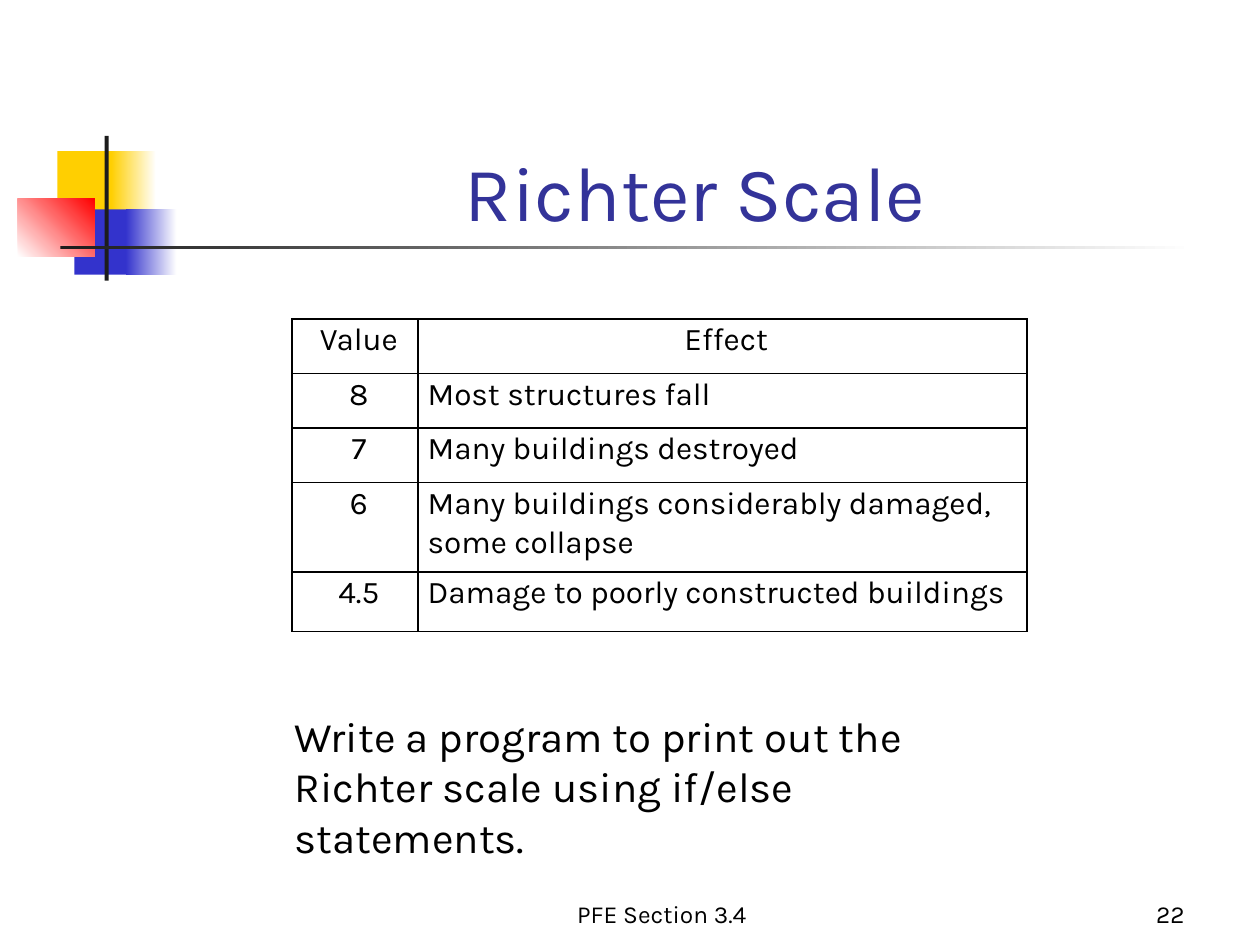
from lxml.etree import SubElement
from pptx import Presentation
from pptx.dml.color import RGBColor
from pptx.enum.shapes import MSO_SHAPE
from pptx.enum.text import MSO_ANCHOR, MSO_AUTO_SIZE, PP_ALIGN
from pptx.oxml.ns import qn
from pptx.util import Cm, Pt

FONT = "Karla"
BLACK, WHITE, DARK = "000000", "FFFFFF", "1C1C1C"
GOLD, BLUE, RED, NAVY = "FFCF01", "3333CC", "FF0000", "333399"

ROWS = [
    (" Value", " Effect"),
    (" 8", "Most structures fall"),
    (" 7", "Many buildings destroyed"),
    (" 6", "Many buildings considerably damaged, some collapse"),
    (" 4.5", "Damage to poorly constructed buildings"),
]
WIDTHS = (2.54, 12.27)
HEIGHTS = (1.1, 1.1, 1.1, 1.8, 1.2)

# Left, top, width, height, start colour, end colour, angle
DECOR = [
    (1.16, 3.05, 1.22, 1.32, GOLD, None, 0),
    (2.24, 3.05, 0.91, 1.32, GOLD, WHITE, 0),
    (1.5, 4.22, 1.17, 1.32, BLUE, None, 0),
    (2.54, 4.22, 1.02, 1.32, BLUE, WHITE, 0),
    (0.36, 4.01, 1.55, 1.17, WHITE, RED, 45),
    (2.11, 2.74, 0.08, 2.92, DARK, None, 0),
    (1.22, 4.95, 22.86, 0.08, DARK, WHITE, 0),
]


def color(code):
    return RGBColor.from_string(code)


def block(slide, x, y, w, h, first, last, angle):
    """Rectangle without outline, plain or with a two-colour gradient."""
    rect = slide.shapes.add_shape(MSO_SHAPE.RECTANGLE, Cm(x), Cm(y), Cm(w), Cm(h))
    rect.shadow.inherit = False
    rect.line.fill.background()
    if last is None:
        rect.fill.solid()
        rect.fill.fore_color.rgb = color(first)
        return
    rect.fill.gradient()
    rect.fill.gradient_angle = angle
    for stop, code in zip(rect.fill.gradient_stops, (first, last)):
        stop.color.rgb = color(code)


def style(frame, size, align, code=BLACK):
    for para in frame.paragraphs:
        para.alignment = align
        for run in para.runs:
            run.font.name = FONT
            run.font.size = Pt(size)
            run.font.color.rgb = color(code)


def head(slide, text):
    title = slide.shapes.title
    title.left, title.top = Cm(3.2), Cm(1.73)
    title.width, title.height = Cm(21.64), Cm(3.18)
    frame = title.text_frame
    frame.text = text
    frame.auto_size = MSO_AUTO_SIZE.NONE
    frame.vertical_anchor = MSO_ANCHOR.BOTTOM
    style(frame, 44, PP_ALIGN.CENTER, NAVY)


def label(slide, text, x, y, w, h, size, align, anchor=MSO_ANCHOR.TOP):
    frame = slide.shapes.add_textbox(Cm(x), Cm(y), Cm(w), Cm(h)).text_frame
    frame.word_wrap = True
    frame.vertical_anchor = anchor
    frame.text = text
    style(frame, size, align)


def border(cell):
    """Thin black line on all four sides; added before the cell's fill."""
    props = cell._tc.get_or_add_tcPr()
    for side in ("a:lnL", "a:lnR", "a:lnT", "a:lnB"):
        line = SubElement(props, qn(side), w=str(Pt(1)))
        fill = SubElement(line, qn("a:solidFill"))
        SubElement(fill, qn("a:srgbClr"), val=BLACK)


def grid(slide, x, y):
    table = slide.shapes.add_table(
        len(ROWS), len(WIDTHS), Cm(x), Cm(y), Cm(sum(WIDTHS)), Cm(sum(HEIGHTS))
    ).table
    for col, width in zip(table.columns, WIDTHS):
        col.width = Cm(width)
    for row, height in zip(table.rows, HEIGHTS):
        row.height = Cm(height)
    for r, texts in enumerate(ROWS):
        for c, text in enumerate(texts):
            cell = table.cell(r, c)
            border(cell)
            cell.fill.background()
            cell.margin_left = cell.margin_right = Cm(0.19)
            cell.margin_top = cell.margin_bottom = 0
            cell.text_frame.text = text
            cell.text_frame.paragraphs[0].line_spacing = 1.07
            middle = r == 0 or c == 0
            align = PP_ALIGN.CENTER if middle else PP_ALIGN.LEFT
            style(cell.text_frame, 18, align)


def main():
    deck = Presentation()
    deck.slide_width, deck.slide_height = Cm(25.4), Cm(19.05)
    slide = deck.slides.add_slide(deck.slide_layouts[5])

    # Decoration and title
    for part in DECOR:
        block(slide, *part)
    head(slide, "Richter Scale")

    # Footer and slide number
    low = MSO_ANCHOR.BOTTOM
    label(slide, "PFE Section 3.4", 9.32, 17.58, 8.05, 1.27, 14, PP_ALIGN.CENTER, low)
    label(slide, "22", 18.85, 17.58, 5.28, 1.27, 14, PP_ALIGN.RIGHT, low)

    # Scale table and task
    grid(slide, 5.89, 6.43)
    task = "Write a program to print out the\nRichter scale using if/else statements."
    label(slide, task, 5.69, 14.2, 14.78, 2.31, 24, PP_ALIGN.LEFT)

    deck.save("out.pptx")


if __name__ == "__main__":
    main()
